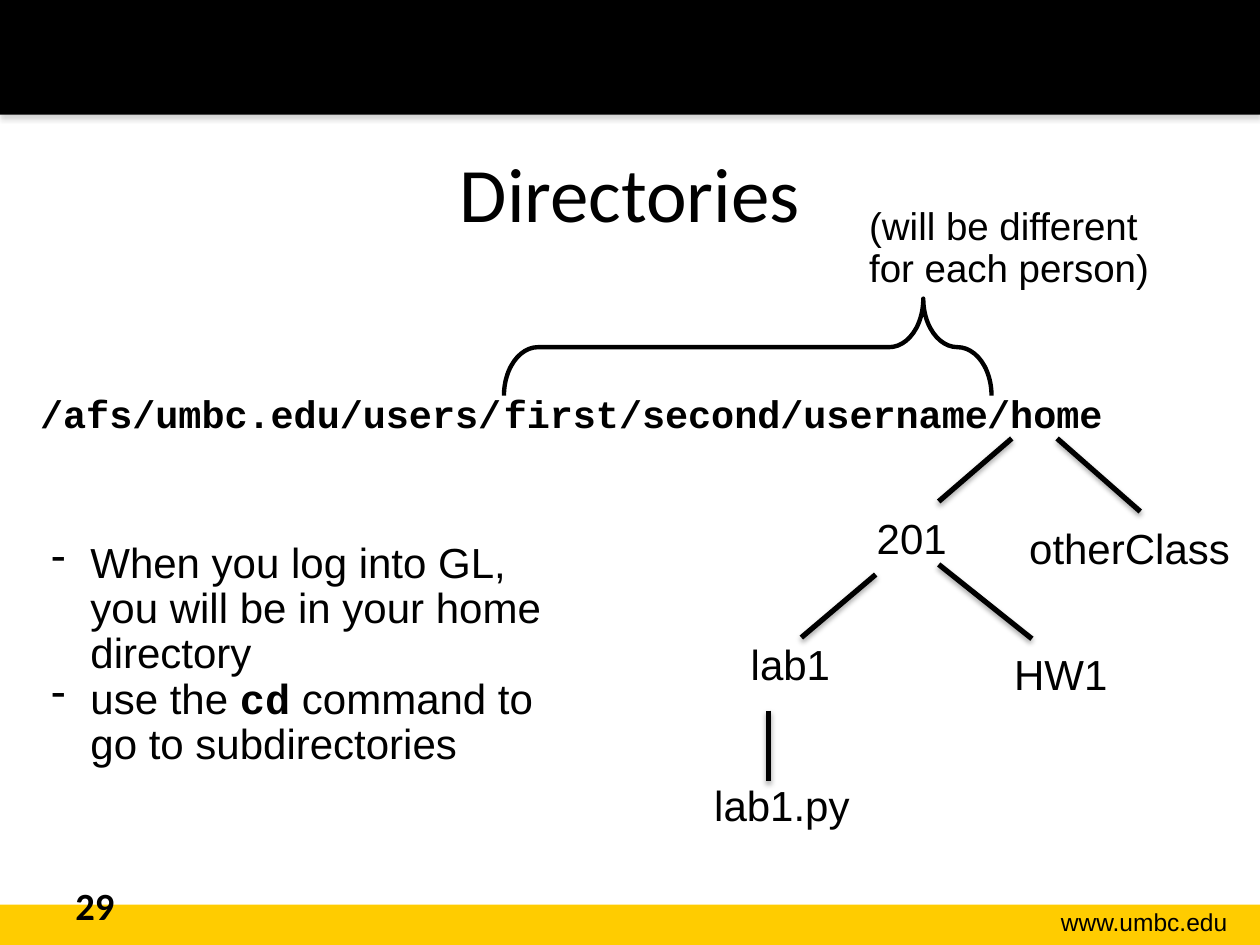
from dataclasses import dataclass

from lxml import etree
from pptx import Presentation
from pptx.dml.color import RGBColor
from pptx.enum.shapes import MSO_CONNECTOR, MSO_SHAPE
from pptx.enum.text import MSO_ANCHOR, PP_ALIGN
from pptx.oxml.ns import qn
from pptx.util import Inches, Pt

LINE = MSO_CONNECTOR.STRAIGHT
RECT, BRACE = MSO_SHAPE.RECTANGLE, MSO_SHAPE.RIGHT_BRACE
LEFT, CENTER, RIGHT = PP_ALIGN.LEFT, PP_ALIGN.CENTER, PP_ALIGN.RIGHT
TOP, MIDDLE = MSO_ANCHOR.TOP, MSO_ANCHOR.MIDDLE


@dataclass(frozen=True)
class Theme:
    """Holds the colours, fonts and sizes of the slide."""
    black: str = "000000"
    gold: str = "FFCC00"
    gray: str = "808080"
    sans: str = "Arial"
    head: str = "Calibri"
    mono: str = "Courier New"
    title: int = 44
    body: int = 24
    note: int = 22
    foot: int = 14


THEME = Theme()
INDENT = 0.31
CHAR = 0.6 * THEME.note / 72
START, USER = "/afs/umbc.edu/users/", "first/second/username"


def place(*box):
    """Turn numbers into lengths in inches."""
    return [Inches(n) for n in box]


def shade(shape, color):
    """Give a shape a soft shadow straight below it."""
    props = shape._element.spPr
    for old in props.findall(qn("a:effectLst")):
        props.remove(old)
    effect = etree.SubElement(props, qn("a:effectLst"))
    drop = etree.SubElement(effect, qn("a:outerShdw"), blurRad=str(Pt(3.1)),
                            dist=str(Pt(1.8)), dir="5400000", rotWithShape="0")
    tint = etree.SubElement(drop, qn("a:srgbClr"), val=color)
    etree.SubElement(tint, qn("a:alpha"), val="35000")


def add_text(slide, box, *paras, font=THEME.sans, size=THEME.body, bold=False,
             align=LEFT, anchor=TOP, space=0.9, bullet=None, tab=None):
    """Add a text box; each paragraph is a string or a list of (text, mono) runs."""
    frame = slide.shapes.add_textbox(*place(*box)).text_frame
    frame.word_wrap = True
    frame.vertical_anchor = anchor
    for i, para in enumerate(paras):
        p = frame.add_paragraph() if i else frame.paragraphs[0]
        props = p._p.get_or_add_pPr()
        if bullet:
            props.set("marL", str(Inches(INDENT)))
            props.set("indent", str(-Inches(INDENT)))
            etree.SubElement(props, qn("a:buChar"), char=bullet)
        if tab:
            tabs = etree.SubElement(props, qn("a:tabLst"))
            etree.SubElement(tabs, qn("a:tab"), pos=str(Inches(tab)), algn="l")
        p.alignment, p.line_spacing = align, space
        for text, mono in [(para, False)] if isinstance(para, str) else para:
            for j, part in enumerate(text.split("\n")):
                if j:
                    p.add_line_break()
                run = p.add_run()
                run.text = part
                run.font.name = THEME.mono if mono else font
                run.font.size = Pt(size)
                run.font.bold = bold or mono
                run.font.color.rgb = RGBColor.from_string(THEME.black)


def add_bar(slide, box, color):
    """Add a plain filled band."""
    bar = slide.shapes.add_shape(RECT, *place(*box))
    bar.shadow.inherit = False
    bar.fill.solid()
    bar.fill.fore_color.rgb = RGBColor.from_string(color)
    bar.line.fill.background()
    return bar


def add_branch(slide, ends):
    """Add one shaded line of the tree."""
    line = slide.shapes.add_connector(LINE, *place(*ends))
    line.line.color.rgb = RGBColor.from_string(THEME.black)
    line.line.width = Pt(3)
    shade(line, THEME.black)


def add_brace(slide, box):
    """Add the brace above the part of the path that varies."""
    brace = slide.shapes.add_shape(BRACE, *place(*box))
    brace.shadow.inherit = False
    brace.rotation = 270
    brace.adjustments[0], brace.adjustments[1] = 0.52, 0.86
    brace.fill.background()
    brace.line.color.rgb = RGBColor.from_string(THEME.black)
    brace.line.width = Pt(2.5)


def add_frame(slide):
    """Add the bands, title, page number and web address."""
    add_bar(slide, (0, 7.18, 10, 0.32), THEME.gold)
    shade(add_bar(slide, (0, 0, 10, 0.91), THEME.black), THEME.gray)
    add_text(slide, (7.85, 7.15, 1.99, 0.34), "www.umbc.edu",
             size=THEME.foot, align=RIGHT, space=1)
    add_text(slide, (0.5, 0.9, 9, 1.25), "Directories", font=THEME.head,
             size=THEME.title, align=CENTER, anchor=MIDDLE, space=1)
    add_text(slide, (0.5, 6.95, 2.33, 0.4), "29", font=THEME.head,
             size=THEME.note, bold=True, space=1)


def add_home(slide):
    """Add the home path with its brace and note."""
    code = dict(font=THEME.mono, size=THEME.note, bold=True)
    add_text(slide, (0.22, 3.09, 9.52, 0.77), START + "\t/home",
             tab=CHAR * len(START + USER), **code)
    add_text(slide, (3.9, 3.09, 4.44, 0.77), USER, **code)
    add_brace(slide, (5.55, 0.82, 0.77, 3.87))
    add_text(slide, (6.8, 1.6, 2.75, 0.77),
             "(will be different \nfor each person)", size=THEME.note)


def add_tree(slide):
    """Add the folders below home and the lines between them."""
    for ends in ((8.03, 3.48, 7.45, 3.98), (8.39, 3.48, 9.05, 4.06),
                 (6.95, 4.56, 6.36, 5.06), (7.45, 4.48, 8.19, 5.07),
                 (6.1, 5.64, 6.1, 6.2)):
        add_branch(slide, ends)
    for name, left, top, width in (
            ("201", 6.86, 4.06, 1.52), ("otherClass", 8.07, 4.14, 1.86),
            ("lab1", 5.86, 5.06, 0.94), ("HW1", 7.95, 5.14, 1.29),
            ("lab1.py", 5.57, 6.18, 1.71)):
        add_text(slide, (left, top, width, 0.47), name)


def main():
    """Build and save the slide."""
    deck = Presentation()
    deck.slide_width, deck.slide_height = place(10, 7.5)
    slide = deck.slides.add_slide(deck.slide_layouts[6])
    add_frame(slide)
    add_home(slide)
    add_tree(slide)
    add_text(slide, (0.31, 4.25, 4.33, 1.92),
             "When you log into GL, you will be in your home directory",
             [("use the ", False), ("cd", True),
              (" command to go to subdirectories", False)], bullet="-")
    deck.save("out.pptx")


if __name__ == "__main__":
    main()
